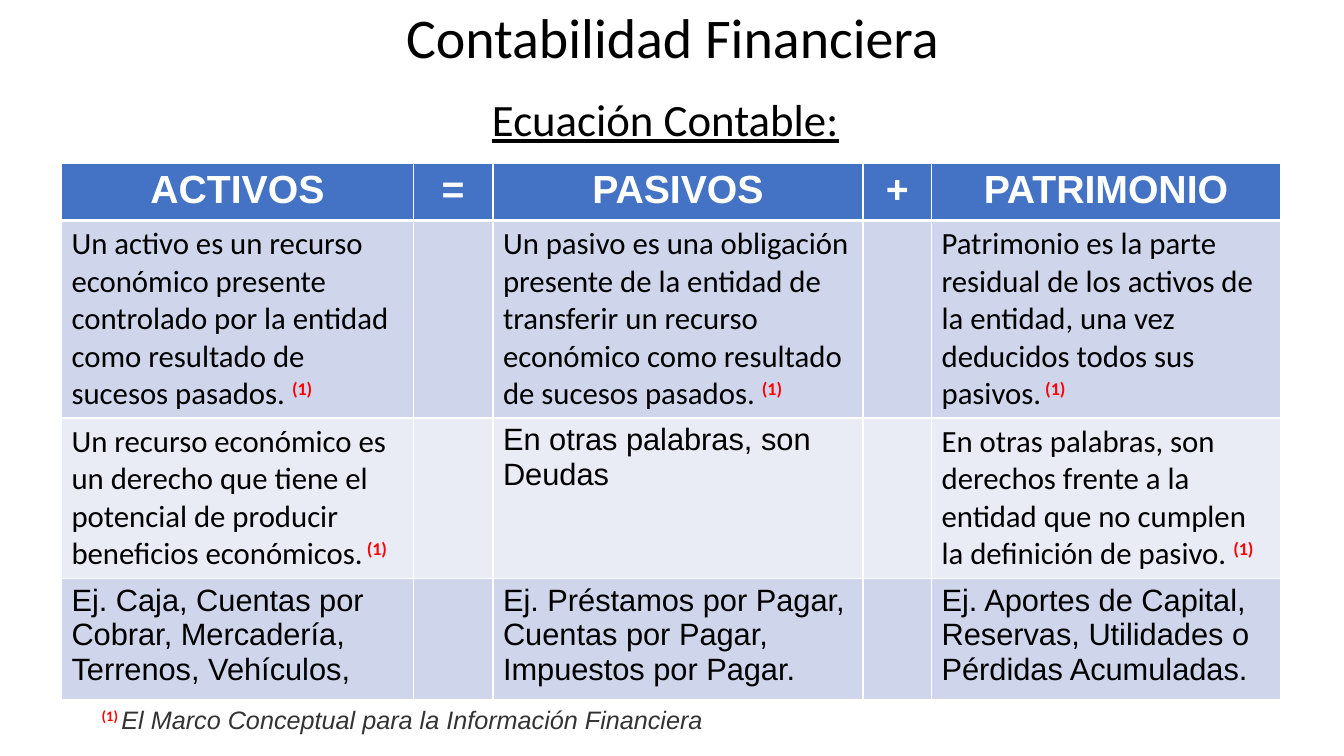
from lxml.etree import SubElement
from pptx import Presentation
from pptx.dml.color import RGBColor
from pptx.enum.text import MSO_ANCHOR as Anchor, PP_ALIGN as Align
from pptx.oxml import parse_xml
from pptx.oxml.ns import nsdecls, qn
from pptx.util import Inches, Pt

BLACK = RGBColor(0x00, 0x00, 0x00)
WHITE = RGBColor(0xFF, 0xFF, 0xFF)
RED = RGBColor(0xFF, 0x00, 0x00)
GRAY = RGBColor(0x33, 0x33, 0x33)
BLUE = RGBColor(0x44, 0x72, 0xC4)
BAND_DARK = RGBColor(0xCF, 0xD5, 0xEA)
BAND_LIGHT = RGBColor(0xE9, 0xEB, 0xF5)

TITLE = dict(name="Calibri", size=Pt(40), color=BLACK)
SUBTITLE = dict(name="Calibri", size=Pt(32), color=BLACK, underline=True)
HEAD = dict(name="Arial", size=Pt(28), color=WHITE, bold=True)
QUOTE = dict(name="Calibri", size=Pt(22), color=BLACK, bold=False)
PLAIN = dict(QUOTE, name="Arial")
MARK = dict(QUOTE, color=RED, bold=True, raised=True)
FOOT_MARK = dict(MARK, size=Pt(18))
FOOT = dict(name="Arial", size=Pt(18), color=GRAY, italic=True)

HEADINGS = ["ACTIVOS", "=", "PASIVOS", "+", "PATRIMONIO"]
DEFINITIONS = [
    [
        [("Un activo es un recurso económico presente controlado por la entidad "
          "como resultado de sucesos pasados. ", QUOTE), ("(1)", MARK)],
        [("Un pasivo es una obligación presente de la entidad de transferir un recurso "
          "económico como resultado de sucesos pasados. ", QUOTE), ("(1)", MARK)],
        [("Patrimonio es la parte residual de los activos de la entidad, una vez "
          "deducidos todos sus pasivos.", QUOTE), (" (1)", MARK)],
    ],
    [
        [("Un recurso económico es un derecho que tiene el potencial de producir "
          "beneficios económicos.", QUOTE), (" (1)", MARK)],
        [("En otras palabras, son Deudas", PLAIN)],
        [("En otras palabras, son derechos frente a la entidad que no cumplen la "
          "definición de pasivo. ", QUOTE), ("(1)", MARK)],
    ],
    [
        [("Ej. Caja, Cuentas por Cobrar, Mercadería, Terrenos, Vehículos,", PLAIN)],
        [("Ej. Préstamos por Pagar, Cuentas por Pagar, Impuestos por Pagar.", PLAIN)],
        [("Ej. Aportes de Capital, Reservas, Utilidades o Pérdidas Acumuladas.", PLAIN)],
    ],
]
TEXT_BOXES = [
    ((0.92, -0.32, 11.5, 1.45), Anchor.MIDDLE, Align.CENTER,
     [("Contabilidad Financiera", TITLE)]),
    ((0.85, 0.92, 11.5, 0.94), Anchor.TOP, Align.CENTER,
     [("Ecuación Contable:", SUBTITLE)]),
    ((0.91, 6.97, 11.5, 0.53), Anchor.TOP, Align.LEFT,
     [("(1) ", FOOT_MARK), ("El Marco Conceptual para la Información Financiera", FOOT)]),
]
TABLE_LEFT, TABLE_TOP = 0.61, 1.62
COLUMN_WIDTHS = [3.49, 0.79, 3.67, 0.68, 3.46]
ROW_HEIGHTS = [0.54, 1.96, 1.59, 1.12]
ROW_FILLS = [BLUE, BAND_DARK, BAND_LIGHT, BAND_DARK]


def write(para, spans, align):
    para.alignment = align
    for text, style in spans:
        span = para.add_run()
        span.text = text
        for key, value in style.items():
            if key == "color":
                span.font.color.rgb = value
            elif key == "raised":
                span.font._element.set("baseline", "30000")
            else:
                setattr(span.font, key, value)


def add_text(page, place, anchor, align, spans):
    box = page.shapes.add_textbox(*map(Inches, place))
    frame = box.text_frame
    frame.word_wrap = True
    frame.vertical_anchor = anchor
    para = frame.paragraphs[0]
    para.line_spacing = 0.9
    write(para, spans, align)


def add_borders(cell, row):
    widths = dict(L=1, R=1, T=3 if row == 1 else 1, B=3 if row == 0 else 1)
    props = cell._tc.get_or_add_tcPr()
    for index, (side, width) in enumerate(widths.items()):
        line = parse_xml(f'<a:ln{side} {nsdecls("a")} w="{Pt(width)}"/>')
        fill = SubElement(line, qn("a:solidFill"))
        SubElement(fill, qn("a:srgbClr")).set("val", str(WHITE))
        props.insert(index, line)


def add_equation(page):
    frame = page.shapes.add_table(
        len(ROW_HEIGHTS), len(COLUMN_WIDTHS), Inches(TABLE_LEFT), Inches(TABLE_TOP),
        Inches(sum(COLUMN_WIDTHS)), Inches(sum(ROW_HEIGHTS)))
    table = frame.table
    for column, width in zip(table.columns, COLUMN_WIDTHS):
        column.width = Inches(width)
    for row, (height, color) in enumerate(zip(ROW_HEIGHTS, ROW_FILLS)):
        table.rows[row].height = Inches(height)
        for column, heading in enumerate(HEADINGS):
            cell = table.cell(row, column)
            cell.fill.solid()
            cell.fill.fore_color.rgb = color
            add_borders(cell, row)
            para = cell.text_frame.paragraphs[0]
            if row == 0:
                write(para, [(heading, HEAD)], Align.CENTER)
            elif column % 2 == 0:
                write(para, DEFINITIONS[row - 1][column // 2], Align.LEFT)


def main():
    deck = Presentation()
    deck.slide_width, deck.slide_height = Inches(13.33), Inches(7.5)
    page = deck.slides.add_slide(deck.slide_layouts[6])
    for text_box in TEXT_BOXES:
        add_text(page, *text_box)
    add_equation(page)
    deck.save("out.pptx")


if __name__ == "__main__":
    main()
